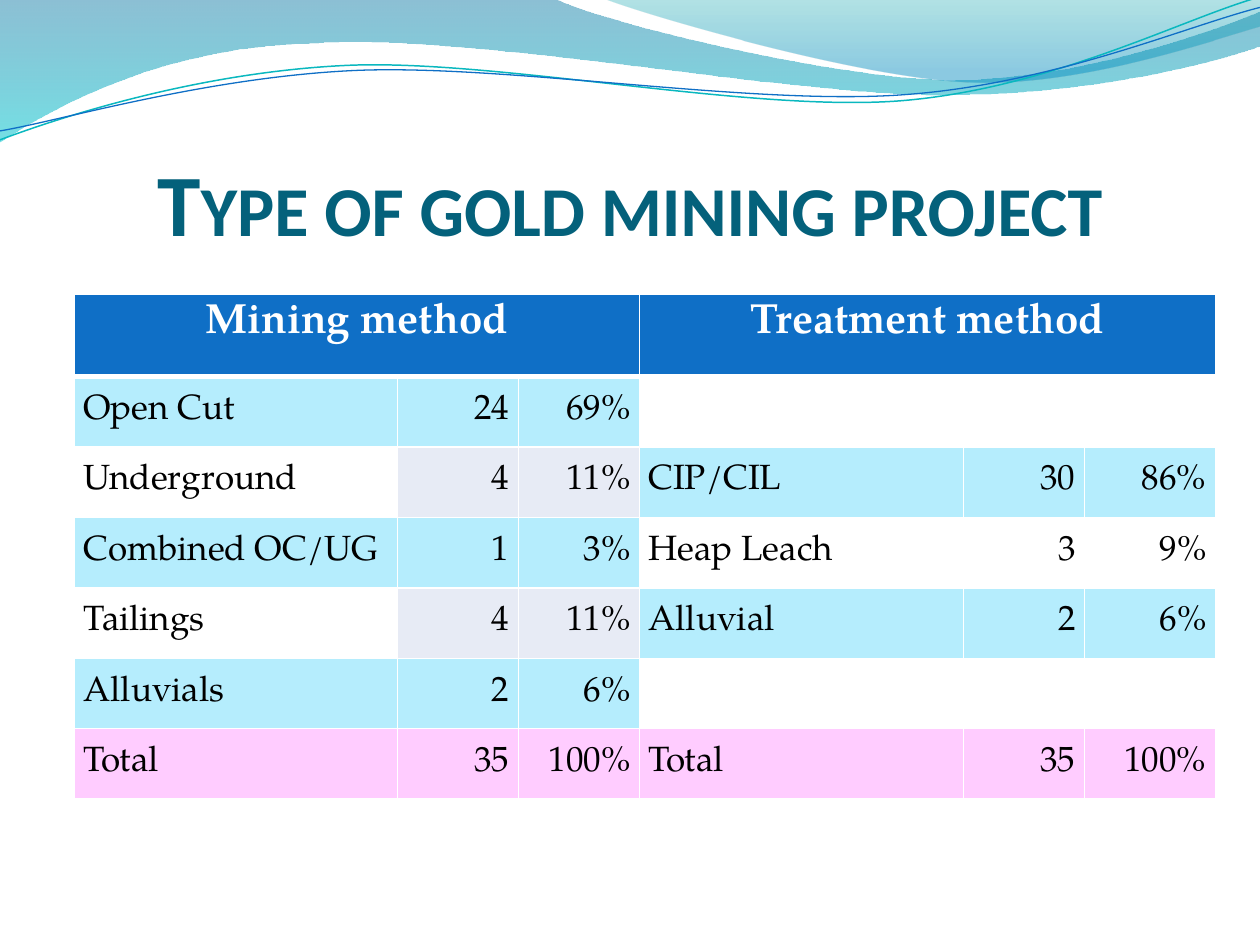
from lxml.etree import SubElement
from pptx import Presentation
from pptx.dml.color import RGBColor
from pptx.enum.text import MSO_ANCHOR, PP_ALIGN
from pptx.oxml.ns import qn
from pptx.util import Cm, Pt

WHITE = RGBColor(0xFF, 0xFF, 0xFF)
BLACK = RGBColor(0x00, 0x00, 0x00)
TITLE_TEAL = RGBColor(0x04, 0x61, 0x7B)
BLUE = RGBColor(0x0F, 0x6F, 0xC6)
TEAL = RGBColor(0x0A, 0xB8, 0xBF)
CYAN = RGBColor(0xB5, 0xED, 0xFD)
GREY = RGBColor(0xE7, 0xEB, 0xF5)
PINK = RGBColor(0xFF, 0xCC, 0xFF)
WAVE_DEEP = RGBColor(0x00, 0x74, 0xA1)
WAVE_LIGHT = RGBColor(0x00, 0xC6, 0xCF)
CREST_GREEN = RGBColor(0x00, 0xA1, 0xA9)
CREST_BLUE = RGBColor(0x00, 0x8B, 0xBF)

# Outlines in cm: one point is a straight step, three points are a Bezier curve
BACK_WAVE = [
    [(0, 0)], [(11.18, -0.03)],
    [(12.09, 0.43), (16.87, 1.6), (19.25, 1.6)],
    [(21.67, 1.6), (24.33, 0.66), (25.4, 0.23)],
    [(25.43, 0.91)],
    [(24.97, 1.12), (22.1, 1.93), (18.95, 1.91)],
    [(15.8, 1.91), (9.7, 0.71), (6.53, 0.86)],
    [(3.28, 0.91), (1.17, 2.11), (-0.03, 2.87)],
    [(0, 0)],
]
CREST = [
    [(12.17, -0.03)],
    [(12.93, 0.28), (17.32, 1.57), (19.53, 1.65)],
    [(21.74, 1.75), (24.41, 0.81), (25.4, 0.53)],
    [(25.4, 0)], [(12.17, -0.03)],
]
# The two thin curves lie flat here and are tilted when drawn
TEAL_CURVE = [
    [(-0.05, 2.22)],
    [(1.19, 1.82), (4.02, 1.04), (7.05, 1.05)],
    [(10.05, 1.07), (15.02, 2.37), (18.08, 2.29)],
    [(21.13, 2.2), (23.87, 0.91), (25.41, 0.55)],
]
BLUE_CURVE = [
    [(-0.04, 2.04)],
    [(1.16, 1.9), (4.18, 1.15), (7.2, 1.16)],
    [(10.25, 1.18), (15.13, 2.25), (18.18, 2.17)],
    [(21.21, 2.1), (23.93, 1.06), (25.45, 0.75)],
]

COLUMN_WIDTHS = [6.51, 2.44, 2.44, 6.53, 2.44, 2.64]
HEADINGS = ["Mining method", "Treatment method"]
PROJECTS = [
    ("Open Cut", "24", "69%", "", "", ""),
    ("Underground", "4", "11%", "CIP/CIL", "30", "86%"),
    ("Combined OC/UG", "1", "3%", "Heap Leach", "3", "9%"),
    ("Tailings", "4", "11%", "Alluvial", "2", "6%"),
    ("Alluvials", "2", "6%", "", "", ""),
    ("Total", "35", "100%", "Total", "35", "100%"),
]


def write(frame, text, size=20, font="TeX Gyre Pagella", color=BLACK, bold=False,
          align=PP_ALIGN.LEFT, gap=0, line_spacing=None, small_caps=False):
    paragraph = frame.paragraphs[0]
    paragraph.alignment = align
    paragraph.space_before = paragraph.space_after = Pt(gap)
    if line_spacing:
        paragraph.line_spacing = Pt(line_spacing)
    run = paragraph.add_run()
    run.text = text
    run.font.size, run.font.name, run.font.bold = Pt(size), font, bold
    run.font.color.rgb = color
    if small_caps:
        run._r.get_or_add_rPr().set("cap", "small")


def table_fill(row, column):
    if row == len(PROJECTS):
        return PINK
    treatment = column >= 3
    if (row % 2 == 0) == treatment:
        return CYAN
    return WHITE if treatment or column == 0 else GREY


class SlideBuilder:
    def __init__(self, slide):
        self.slide = slide
        self.border, self.heading_border = Pt(1), Pt(3)
        self.cell_margin = Cm(0.18)
        self.curve_tilt = -2.7

    def outline(self, pieces, close):
        start, *points = [(Cm(x), Cm(y)) for piece in pieces for x, y in piece]
        builder = self.slide.shapes.build_freeform(*start)
        builder.add_line_segments(points, close=close)
        shape = builder.convert_to_shape()
        shape.shadow.inherit = False
        # Join each group of three steps into one Bezier curve
        steps = iter(list(shape._element.iter(qn("a:lnTo"))))
        for piece in pieces[1:]:
            group = [next(steps) for _ in piece]
            if len(group) == 3:
                group[0].tag = qn("a:cubicBezTo")
                for step in group[1:]:
                    group[0].append(step[0])
                    step.getparent().remove(step)
        return shape

    def wave(self, pieces, stops):
        shape = self.outline(pieces, True)
        shape.line.fill.background()
        shape.fill.gradient()
        shape.fill.gradient_angle = 270
        for stop, (position, color, _) in zip(shape.fill.gradient_stops, stops):
            stop.position = position
            stop.color.rgb = color
        for tint, (_, _, opacity) in zip(shape._element.spPr.iter(qn("a:srgbClr")), stops):
            SubElement(tint, qn("a:alpha")).set("val", str(opacity * 1000))

    def curve(self, pieces, color, width):
        shape = self.outline(pieces, False)
        shape.rotation = self.curve_tilt
        shape.fill.background()
        shape.line.color.rgb = color
        shape.line.width = Pt(width)

    def title(self, text):
        frame = self.slide.shapes.add_textbox(Cm(1.27), Cm(1.95), Cm(22.86), Cm(3.17)).text_frame
        frame.word_wrap = True
        frame.vertical_anchor = MSO_ANCHOR.BOTTOM
        frame.margin_left = frame.margin_right = frame.margin_bottom = 0
        write(frame, text, size=50, font="Calibri", color=TITLE_TEAL, bold=True,
              align=PP_ALIGN.CENTER, small_caps=True)

    def cell(self, cell, fill, bottom):
        properties = cell._tc.get_or_add_tcPr()
        for side in "LRTB":
            width = bottom if side == "B" else self.border
            edge = SubElement(properties, qn(f"a:ln{side}"), w=str(width))
            paint = SubElement(edge, qn("a:solidFill"))
            SubElement(paint, qn("a:srgbClr"), val=str(WHITE))
        cell.fill.solid()
        cell.fill.fore_color.rgb = fill
        cell.vertical_anchor = MSO_ANCHOR.MIDDLE
        cell.margin_left = cell.margin_right = self.cell_margin
        cell.margin_top = cell.margin_bottom = 0

    def table(self):
        row_heights = [1.66] + [1.42] * len(PROJECTS)
        table = self.slide.shapes.add_table(
            len(row_heights), len(COLUMN_WIDTHS), Cm(1.5), Cm(5.93),
            Cm(sum(COLUMN_WIDTHS)), Cm(sum(row_heights))).table
        table.horz_banding = False
        for column, width in zip(table.columns, COLUMN_WIDTHS):
            column.width = Cm(width)
        for row, height in zip(table.rows, row_heights):
            row.height = Cm(height)

        # Headings, each across three columns
        for column in range(len(COLUMN_WIDTHS)):
            self.cell(table.cell(0, column), BLUE, self.heading_border)
        for index, heading in enumerate(HEADINGS):
            first = table.cell(0, 3 * index)
            first.merge(table.cell(0, 3 * index + 2))
            write(first.text_frame, heading, size=24, color=WHITE, bold=True,
                  align=PP_ALIGN.CENTER, gap=6, line_spacing=10.5)

        # Methods and totals
        for row, values in enumerate(PROJECTS, start=1):
            for column, value in enumerate(values):
                cell = table.cell(row, column)
                self.cell(cell, table_fill(row, column), self.border)
                if value:
                    write(cell.text_frame, value, gap=6 if row == len(PROJECTS) else 3,
                          align=PP_ALIGN.RIGHT if column % 3 else PP_ALIGN.LEFT)


def main():
    deck = Presentation()
    deck.slide_width, deck.slide_height = Cm(25.4), Cm(19.05)
    builder = SlideBuilder(deck.slides.add_slide(deck.slide_layouts[6]))

    # Waves along the top
    builder.wave(BACK_WAVE, [(0, WAVE_DEEP, 45), (1, WAVE_LIGHT, 55)])
    builder.wave(CREST, [(0, CREST_GREEN, 30), (0.8, CREST_BLUE, 45)])
    builder.curve(TEAL_CURVE, TEAL, 0.85)
    builder.curve(BLUE_CURVE, BLUE, 0.75)

    # Title and table
    builder.title("Type of gold mining project")
    builder.table()
    deck.save("out.pptx")


if __name__ == "__main__":
    main()
